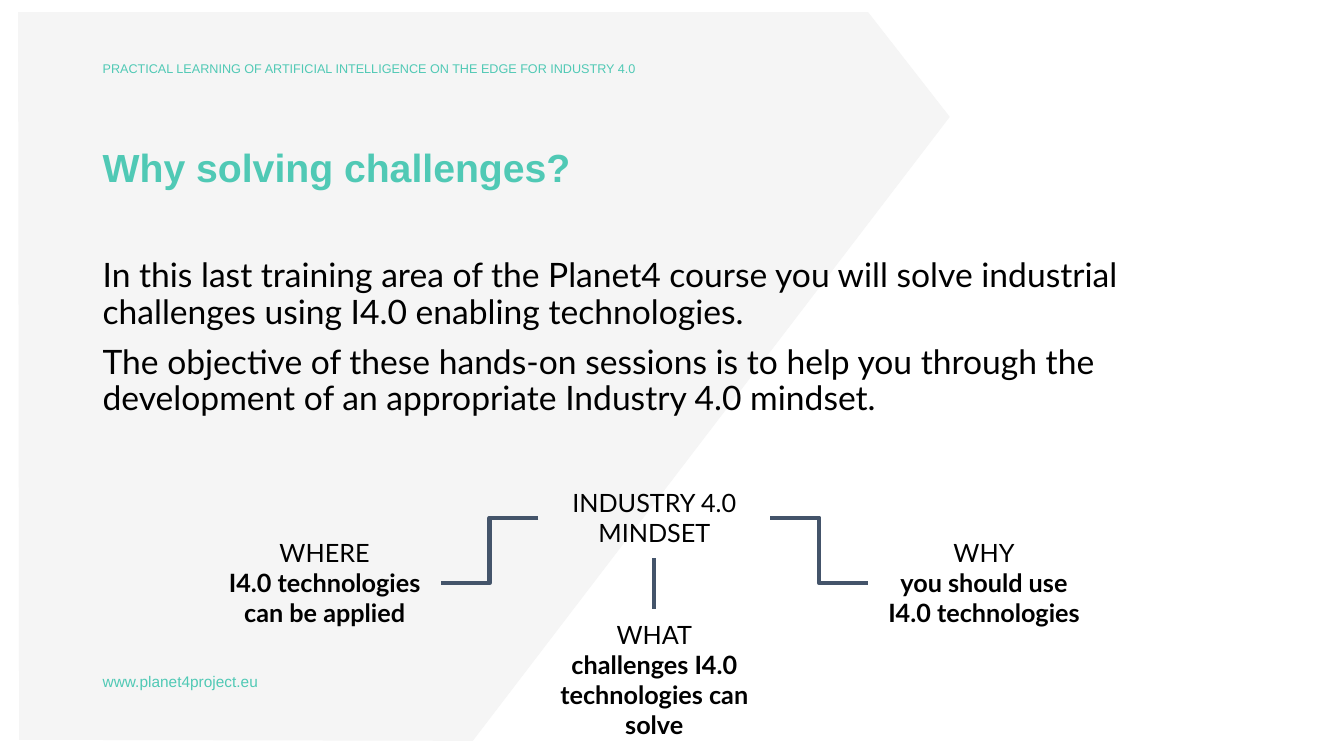
"""Build the slide on why to solve Industry 4.0 challenges."""
from pptx import Presentation
from pptx import util as u
from pptx.dml.color import RGBColor
from pptx.enum import shapes, text
from pptx.oxml import parse_xml
from pptx.oxml.ns import nsdecls

HUES = {"mint": "50C9B5", "ink": "000000", "pale": "F5F5F5", "slate": "44546A"}
TOP, MID = text.MSO_ANCHOR.TOP, text.MSO_ANCHOR.MIDDLE
LEFT, MIDST = text.PP_ALIGN.LEFT, text.PP_ALIGN.CENTER

deck = Presentation()
deck.slide_width, deck.slide_height = u.Inches(13.33), u.Inches(7.5)
slide = deck.slides.add_slide(deck.slide_layouts[6])


def write(lines, left, top, width, height, size, font="Lato", hue="ink", bold=(),
          align=LEFT, anchor=TOP, pad=0.05, space=0.9, gap=0):
    box = slide.shapes.add_textbox(*map(u.Inches, (left, top, width, height)))
    frame = box.text_frame
    frame.word_wrap = True
    frame.vertical_anchor = anchor
    frame.margin_left = frame.margin_right = u.Inches(0.1)
    frame.margin_top = frame.margin_bottom = u.Inches(pad)
    for i, line in enumerate(lines):
        para = frame.add_paragraph() if i else frame.paragraphs[0]
        para.alignment = align
        para.line_spacing = space
        if i and gap:
            para.space_before = u.Pt(gap)
        run = para.add_run()
        run.text = line
        run.font.name = font
        run.font.size = u.Pt(size)
        run.font.bold = i in bold
        run.font.color.rgb = RGBColor.from_string(HUES[hue])
    return box


edge = [(u.Inches(x), u.Inches(y)) for x, y in
        [(0.18, 0.12), (8.61, 0.12), (9.42, 1.16), (4.69, 7.35), (0.19, 7.34)]]
pen = slide.shapes.build_freeform(*edge[0])
pen.add_line_segments(edge[1:], close=True)
panel = pen.convert_to_shape()
panel.shadow.inherit = False
panel.fill.solid()
panel.fill.fore_color.rgb = RGBColor.from_string(HUES["pale"])
panel.line.fill.background()

brand = dict(font="Arial", hue="mint", anchor=MID)
write(["PRACTICAL LEARNING OF ARTIFICIAL INTELLIGENCE ON THE EDGE FOR INDUSTRY 4.0"],
      0.92, 0.52, 11.5, 0.33, 9, **brand)
write(["www.planet4project.eu"], 0.92, 6.61, 11.5, 0.33, 11, **brand)
write(["Why solving challenges?"], 0.92, 1.04, 11.5, 1.29, 28, bold=(0,), **brand)
write(["In this last training area of the Planet4 course you will solve industrial "
       "challenges using I4.0 enabling technologies.",
       "The objective of these hands-on sessions is to help you through the "
       "development of an appropriate Industry 4.0 mindset."],
      0.92, 2.52, 11.5, 1.74, 24, gap=10)

node = dict(size=18, bold=(1, 2), align=MIDST, pad=0.1, space=1.0)
hub = write(["INDUSTRY 4.0 MINDSET"], 5.34, 4.73, 2.3, 0.81, **node)
elbow, plain = shapes.MSO_CONNECTOR.ELBOW, shapes.MSO_CONNECTOR.STRAIGHT
goals = [
    (["WHERE", "I4.0 technologies can be applied"], 2.07, 5.23, 1.11, elbow, 1, 3),
    (["WHAT", "challenges I4.0 technologies can solve"], 5.34, 6.04, 1.41, plain, 2, 0),
    (["WHY", "you should use", "I4.0 technologies"], 8.61, 5.23, 1.11, elbow, 3, 1),
]
for lines, left, top, height, kind, start, end in goals:
    goal = write(lines, left, top, 2.3, height, **node)
    link = slide.shapes.add_connector(kind, 0, 0, 0, 0)
    link.begin_connect(hub, start)
    link.end_connect(goal, end)
    link.line.width = u.Pt(3)
    link.line.color.rgb = RGBColor.from_string(HUES["slate"])
    link._element.spPr.append(parse_xml(f"<a:effectLst {nsdecls('a')}/>"))

deck.save("out.pptx")
